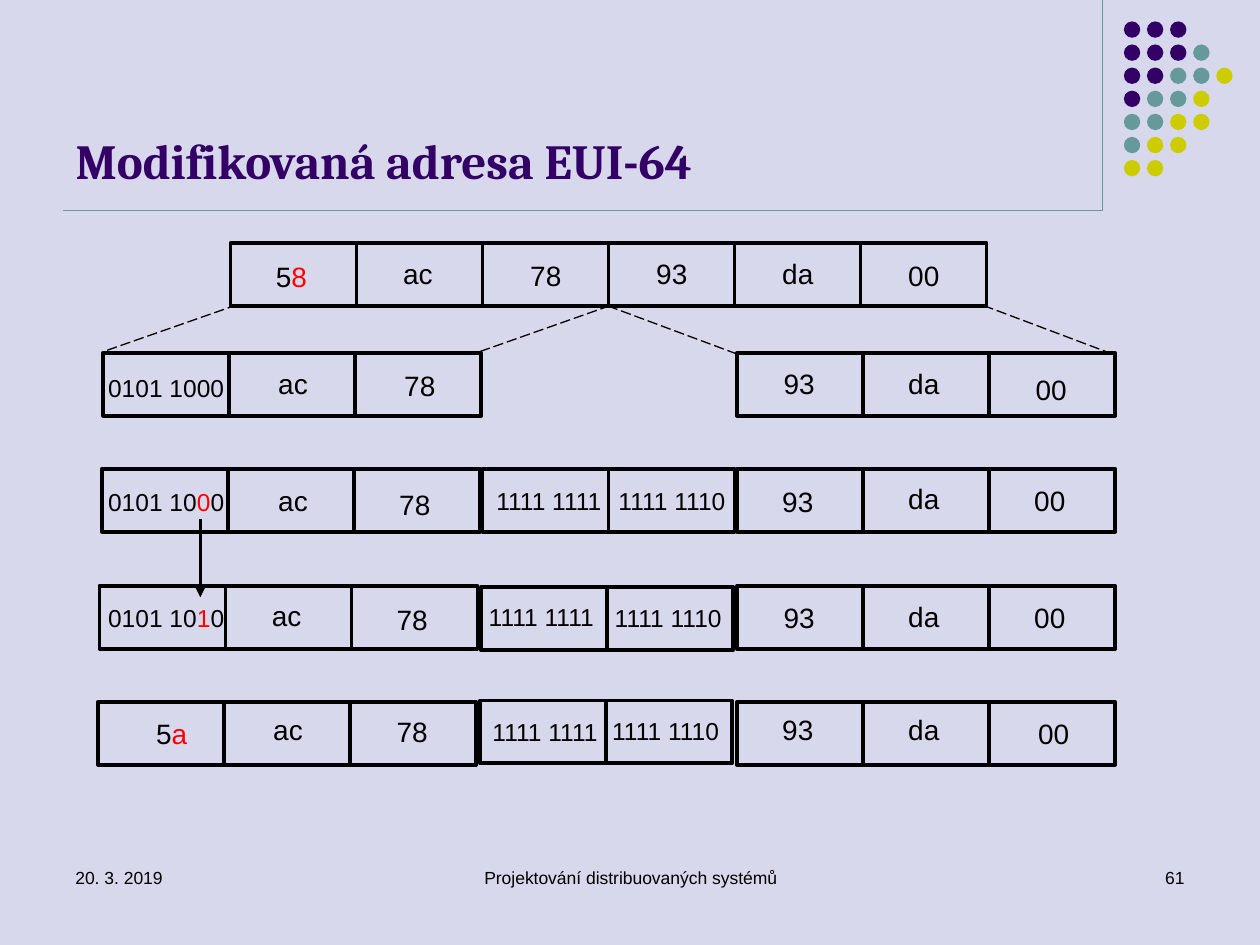
from typing import NamedTuple

from pptx import Presentation
from pptx.dml.color import RGBColor
from pptx.enum.dml import MSO_LINE
from pptx.enum.shapes import MSO_CONNECTOR, MSO_SHAPE
from pptx.enum.text import MSO_ANCHOR, MSO_AUTO_SIZE, PP_ALIGN
from pptx.oxml.ns import qn
from pptx.shapes.connector import Connector
from pptx.slide import Slide
from pptx.util import Inches, Pt
from lxml.etree import SubElement

BACKGROUND = RGBColor(0xD8, 0xD8, 0xEC)
PURPLE = RGBColor(0x33, 0x00, 0x66)
TEAL = RGBColor(0x66, 0x99, 0x99)
LIME = RGBColor(0xCC, 0xCC, 0x00)
BLACK = RGBColor(0x00, 0x00, 0x00)
RED = RGBColor(0xFF, 0x00, 0x00)

BYTE_WIDTH, BYTE_HEIGHT = 1, 0.5
DOT_SIZE, DOT_PITCH = 0.13, 1.1 / 6
DOT_LEFT, DOT_TOP = 8.92, 0.17
DOT_COLORS = {"P": PURPLE, "T": TEAL, "L": LIME}
DOT_ROWS = ["PPP", "PPPT", "PPTTL", "PTTL", "TTLL", "TLL", "LL"]


class Byte(NamedTuple):
    left: float
    top: float
    before: str
    changed: str = ""
    after: str = ""


class Block(NamedTuple):
    left: float
    top: float
    content: list[Byte]


class Segment(NamedTuple):
    start: tuple[float, float]
    end: tuple[float, float]


class Footer(NamedTuple):
    left: float
    width: float
    text: str
    align: PP_ALIGN


BLOCKS = [
    Block(1.83, 1.93, [Byte(2.09, 2.01, "5", "8"), Byte(3.1, 1.99, "ac"), Byte(4.11, 2, "78")]),
    Block(4.83, 1.93, [Byte(5.11, 1.99, "93"), Byte(6.11, 1.99, "da"), Byte(7.11, 2, "00")]),
    Block(0.82, 2.8, [Byte(0.76, 2.91, "0101 1000"), Byte(2.11, 2.86, "ac"), Byte(3.11, 2.88, "78")]),
    Block(5.85, 2.8, [Byte(6.12, 2.86, "93"), Byte(7.11, 2.86, "da"), Byte(8.12, 2.91, "00")]),
    Block(0.81, 3.72, [Byte(0.76, 3.82, "0101 10", "0", "0"), Byte(2.11, 3.79, "ac"), Byte(3.07, 3.82, "78")]),
    Block(3.83, 3.72, [Byte(3.84, 3.81, "1111 1111"), Byte(4.81, 3.81, "1111 1110")]),
    Block(5.85, 3.72, [Byte(6.11, 3.8, "93"), Byte(7.11, 3.77, "da"), Byte(8.11, 3.79, "00")]),
    Block(0.79, 4.65, [Byte(0.76, 4.74, "0101 10", "1", "0"), Byte(2.06, 4.7, "ac"), Byte(3.05, 4.73, "78")]),
    Block(3.82, 4.66, [Byte(3.78, 4.73, "1111 1111"), Byte(4.78, 4.74, "1111 1110")]),
    Block(5.85, 4.65, [Byte(6.12, 4.72, "93"), Byte(7.11, 4.71, "da"), Byte(8.11, 4.72, "00")]),
    Block(0.78, 5.57, [Byte(1.14, 5.64, "5", "a"), Byte(2.07, 5.61, "ac"), Byte(3.05, 5.62, "78")]),
    Block(3.81, 5.56, [Byte(3.81, 5.64, "1111 1111"), Byte(4.76, 5.63, "1111 1110")]),
    Block(5.85, 5.57, [Byte(6.11, 5.61, "93"), Byte(7.11, 5.61, "da"), Byte(8.14, 5.64, "00")]),
]

RULES = [Segment((8.75, 0), (8.75, 1.67)), Segment((0.5, 1.67), (8.75, 1.67))]
EXPANSIONS = [
    Segment((3.81, 2.79), (4.83, 2.43)),
    Segment((5.85, 2.81), (4.83, 2.43)),
    Segment((8.83, 2.81), (7.82, 2.43)),
    Segment((0.85, 2.78), (1.88, 2.42)),
]
BIT_FLIP = Segment((1.59, 4.12), (1.59, 4.74))

FOOTERS = [
    Footer(0.5, 2.33, "20. 3. 2019", PP_ALIGN.LEFT),
    Footer(3.42, 3.17, "Projektování distribuovaných systémů", PP_ALIGN.CENTER),
    Footer(7.17, 2.33, "61", PP_ALIGN.RIGHT),
]


def draw_segment(slide: Slide, segment: Segment, color: RGBColor, width: float) -> Connector:
    points = [Inches(value) for value in segment.start + segment.end]
    connector = slide.shapes.add_connector(MSO_CONNECTOR.STRAIGHT, *points)
    connector.line.color.rgb = color
    connector.line.width = Pt(width)
    SubElement(connector._element.spPr, qn("a:effectLst"))
    return connector


def draw_dots(slide: Slide) -> None:
    for row, colors in enumerate(DOT_ROWS):
        for column, key in enumerate(colors):
            dot = slide.shapes.add_shape(
                MSO_SHAPE.OVAL,
                Inches(DOT_LEFT + column * DOT_PITCH),
                Inches(DOT_TOP + row * DOT_PITCH),
                Inches(DOT_SIZE),
                Inches(DOT_SIZE),
            )
            dot.shadow.inherit = False
            dot.fill.solid()
            dot.fill.fore_color.rgb = DOT_COLORS[key]
            dot.line.fill.background()


def draw_title(slide: Slide, text: str) -> None:
    title = slide.shapes.title
    title.left, title.top = Inches(0.5), Inches(0.13)
    title.width, title.height = Inches(8.25), Inches(1.42)
    frame = title.text_frame
    frame.text = text
    frame.auto_size = MSO_AUTO_SIZE.NONE
    frame.vertical_anchor = MSO_ANCHOR.BOTTOM
    heading = frame.paragraphs[0]
    heading.alignment = PP_ALIGN.LEFT
    heading.font.name = "Cambria"
    heading.font.size = Pt(28)
    heading.font.bold = True
    heading.font.color.rgb = PURPLE


def draw_footer(slide: Slide, footer: Footer) -> None:
    box = slide.shapes.add_textbox(Inches(footer.left), Inches(6.83), Inches(footer.width), Inches(0.5))
    frame = box.text_frame
    frame.word_wrap = True
    frame.text = footer.text
    line = frame.paragraphs[0]
    line.alignment = footer.align
    line.font.name = "Arial"
    line.font.size = Pt(10)
    line.font.color.rgb = BLACK


def draw_label(slide: Slide, byte: Byte) -> None:
    is_binary = len(byte.before) > 2
    if is_binary:
        width = 1.13 if byte.before.startswith("0") else 1.05
    else:
        width = 0.45
    height = 0.34 if is_binary else 0.37
    box = slide.shapes.add_textbox(Inches(byte.left), Inches(byte.top), Inches(width), Inches(height))
    frame = box.text_frame
    frame.word_wrap = False
    frame.auto_size = MSO_AUTO_SIZE.SHAPE_TO_FIT_TEXT
    digits = frame.paragraphs[0]
    digits.font.name = "Arial"
    digits.font.size = Pt(14 if is_binary else 16)
    for text, color in ((byte.before, BLACK), (byte.changed, RED), (byte.after, BLACK)):
        if text:
            run = digits.add_run()
            run.text = text
            run.font.color.rgb = color


def draw_block(slide: Slide, block: Block) -> None:
    for position, byte in enumerate(block.content):
        cell = slide.shapes.add_shape(
            MSO_SHAPE.RECTANGLE,
            Inches(block.left + position * BYTE_WIDTH),
            Inches(block.top),
            Inches(BYTE_WIDTH),
            Inches(BYTE_HEIGHT),
        )
        cell.shadow.inherit = False
        cell.fill.background()
        cell.line.color.rgb = BLACK
        cell.line.width = Pt(2.25)
        draw_label(slide, byte)


def main() -> None:
    deck = Presentation()
    deck.slide_width, deck.slide_height = Inches(10), Inches(7.5)
    slide = deck.slides.add_slide(deck.slide_layouts[5])
    slide.background.fill.solid()
    slide.background.fill.fore_color.rgb = BACKGROUND

    for rule in RULES:
        draw_segment(slide, rule, TEAL, 0.75)
    draw_dots(slide)
    draw_title(slide, "Modifikovaná adresa EUI-64")
    for footer in FOOTERS:
        draw_footer(slide, footer)
    for block in BLOCKS:
        draw_block(slide, block)
    for expansion in EXPANSIONS:
        draw_segment(slide, expansion, BLACK, 0.75).line.dash_style = MSO_LINE.LONG_DASH
    arrow = draw_segment(slide, BIT_FLIP, BLACK, 2)
    SubElement(arrow.line._get_or_add_ln(), qn("a:tailEnd"), type="triangle")

    deck.save("out.pptx")


if __name__ == "__main__":
    main()
